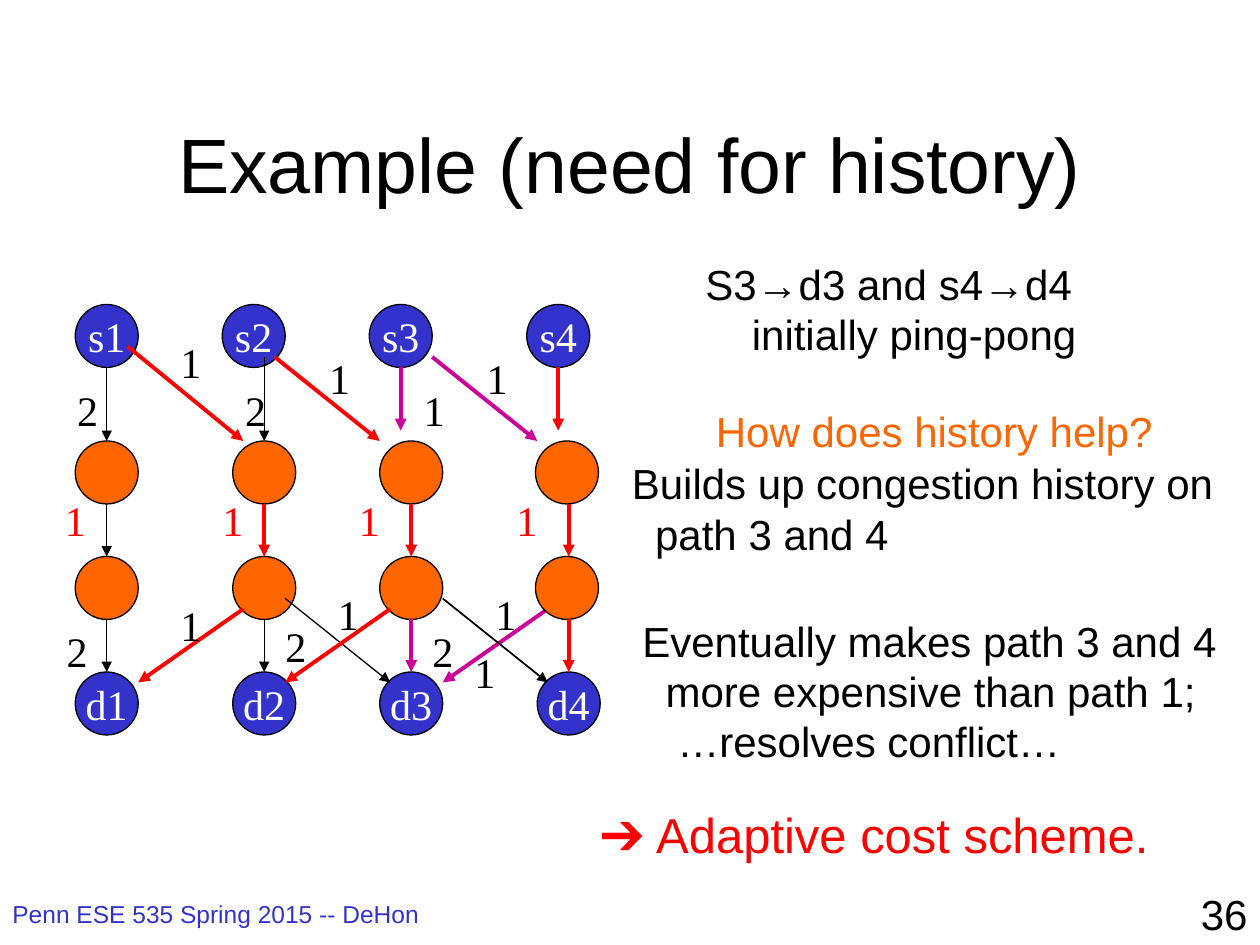
import pptx
import pptx.util
import pptx.dml.color
import pptx.enum.shapes
import pptx.enum.text
import pptx.oxml.ns
import lxml.etree

Pt = pptx.util.Pt
ALIGN = pptx.enum.text.PP_ALIGN
ANCHOR = pptx.enum.text.MSO_ANCHOR
SANS, SERIF = "Arial", "Times New Roman"
BLACK, WHITE, BLUE = "000000", "FFFFFF", "3333CC"
RED, ORANGE, MAGENTA = "FF0000", "FF6600", "CC0099"
NODE = 36


def color(hex_value):
    return pptx.dml.color.RGBColor.from_string(hex_value)


def format_font(font, hex_value, **values):
    for name, value in values.items():
        setattr(font, name, value)
    font.color.rgb = color(hex_value)


def write(paragraph, parts, size, hex_value):
    """Fill a paragraph from (wording, font name) parts."""
    for wording, face in parts:
        run = paragraph.add_run()
        run.text = wording
        format_font(run.font, hex_value, size=Pt(size), name=face)


def add_text(slide, box, lines, size=24, hex_value=BLACK, align=ALIGN.LEFT):
    """Each line is (left indent, parts)."""
    frame = slide.shapes.add_textbox(*map(Pt, box)).text_frame
    frame.word_wrap = False
    for number, (indent, parts) in enumerate(lines):
        paragraph = frame.add_paragraph() if number else frame.paragraphs[0]
        paragraph.alignment = align
        if indent:
            properties = paragraph._p.get_or_add_pPr()
            properties.set("marL", str(Pt(indent)))
            properties.set("indent", "0")
        write(paragraph, parts, size, hex_value)


def add_node(slide, left, top, fill, name=""):
    node = slide.shapes.add_shape(pptx.enum.shapes.MSO_SHAPE.OVAL,
                                  Pt(left), Pt(top), Pt(NODE), Pt(NODE))
    node.shadow.inherit = False
    node.fill.solid()
    node.fill.fore_color.rgb = color(fill)
    node.line.color.rgb = color(BLACK)
    node.line.width = Pt(0.75)
    if name:
        frame = node.text_frame
        frame.word_wrap = False
        frame.vertical_anchor = ANCHOR.MIDDLE
        frame.paragraphs[0].alignment = ALIGN.CENTER
        write(frame.paragraphs[0], [(name, SERIF)], 24, WHITE)


def add_arrow(slide, start, end, hex_value, width):
    arrow = slide.shapes.add_connector(pptx.enum.shapes.MSO_CONNECTOR.STRAIGHT,
                                       *map(Pt, (*start, *end)))
    arrow.line.color.rgb = color(hex_value)
    arrow.line.width = Pt(width)
    qn = pptx.oxml.ns.qn
    lxml.etree.SubElement(arrow.line._get_or_add_ln(), qn("a:tailEnd"), type="triangle")
    lxml.etree.SubElement(arrow._element.spPr, qn("a:effectLst"))


def build_network(slide, left, top):
    """Sources, two routing stages and destinations, with path costs."""
    sources, stage, sinks = (0, 84, 168, 258), (0, 90, 174, 263), (0, 90, 174, 264)

    def add_edges(edges):
        for x1, y1, x2, y2, hex_value, width in edges:
            add_arrow(slide, (left + x1, top + y1), (left + x2, top + y2), hex_value, width)

    # Edges that start under their node
    add_edges([
        (18, 30, 18, 78, BLACK, 0.75),
        (18, 174, 18, 210, BLACK, 0.75),
        (108, 174, 108, 210, BLACK, 0.75),
        (270, 174, 210, 216, MAGENTA, 2.25),
    ])

    # Nodes
    rows = [(0, sources, BLUE, "s"), (78, stage, ORANGE, ""),
            (144, stage, ORANGE, ""), (210, sinks, BLUE, "d")]
    for y, columns, fill, prefix in rows:
        for number, x in enumerate(columns, 1):
            add_node(slide, left + x, top + y, fill, f"{prefix}{number}" if prefix else "")

    # Edges from the sources
    add_edges([
        (108, 30, 108, 78, BLACK, 0.75),
        (30, 24, 96, 78, RED, 2.25),
        (114, 30, 174, 78, RED, 2.25),
        (186, 36, 186, 72, MAGENTA, 2.25),
        (204, 30, 264, 78, MAGENTA, 2.25),
        (276, 36, 276, 72, RED, 2.25),
    ])
    # Edges between the stages
    add_edges([(18, 114, 18, 144, BLACK, 0.75)])
    add_edges([(x, 114, x, 144, RED, 2.25) for x in (108, 192, 282)])
    # Edges to the destinations
    add_edges([
        (96, 174, 36, 216, RED, 2.25),
        (120, 168, 180, 216, BLACK, 0.75),
        (180, 174, 120, 216, RED, 2.25),
        (192, 180, 192, 210, MAGENTA, 2.25),
        (210, 168, 270, 216, BLACK, 1),
        (282, 180, 282, 210, RED, 2.25),
    ])

    # Path costs
    costs = [
        ("2", BLACK, [(-6, 42), (90, 42), (-12, 180), (113, 177), (197, 180)]),
        ("1", BLACK, [(53, 15), (138, 24), (228, 24), (192, 42),
                      (53, 165), (143, 159), (233, 159), (221, 192)]),
        ("1", RED, [(x, 105) for x in (-13, 77, 155, 245)]),
    ]
    for cost, hex_value, places in costs:
        for x, y in places:
            add_text(slide, (left + x, top + y, 26.4, 36), [(0, [(cost, SERIF)])],
                     hex_value=hex_value)


def build_explanation(slide, left, top):
    """The remarks to the right of the network."""
    remarks = [
        ((60, 0, 230, 65), 24, BLACK,
         [(0, [("S3→d3 and s4", SANS), ("→", SERIF), ("d4", SANS)]),
          (26.6, [("initially ping-pong", SANS)])]),
        ((66, 84, 266, 36), 24, ORANGE, [(0, [("How does history help?", SANS)])]),
        ((18, 114, 347, 65), 24, BLACK,
         [(0, [("Builds up congestion history on", SANS)]),
          (13.3, [("path 3 and 4", SANS)])]),
        ((24, 204, 343, 94), 24, BLACK,
         [(0, [("Eventually makes path 3 and 4", SANS)]),
          (13.3, [("more expensive than path 1;", SANS)]),
          (20, [("…resolves conflict…", SANS)])]),
        ((0, 312, 333, 41), 28, RED,
         [(0, [("➔ ", SERIF), ("Adaptive cost scheme.", SANS)])]),
    ]
    for (x, y, width, height), size, hex_value, lines in remarks:
        add_text(slide, (left + x, top + y, width, height), lines, size, hex_value)


def build_title(slide, left, top, width, height):
    title = slide.shapes.title
    box = {"left": left, "top": top, "width": width, "height": height}
    for name, value in box.items():
        setattr(title, name, Pt(value))
    frame = title.text_frame
    frame.vertical_anchor = ANCHOR.MIDDLE
    frame.paragraphs[0].alignment = ALIGN.CENTER
    write(frame.paragraphs[0], [("Example (need for history)", SANS)], 44, BLACK)


def build_footer(slide, left, top, width):
    add_text(slide, (left, top + 6, 276, 30),
             [(0, [("Penn ESE 535 Spring 2015 -- DeHon", SANS)])], 14, BLUE)
    add_text(slide, (left + width - 150, top, 150, 36), [(0, [("36", SANS)])],
             align=ALIGN.RIGHT)


def main():
    presentation = pptx.Presentation()
    presentation.slide_width, presentation.slide_height = Pt(720), Pt(540)
    slide = presentation.slides.add_slide(presentation.slide_layouts[5])
    build_footer(slide, 0, 504, 720)
    build_title(slide, 54, 48, 612, 90)
    build_network(slide, 43, 174)
    build_explanation(slide, 336, 144)
    presentation.save("out.pptx")


if __name__ == "__main__":
    main()
